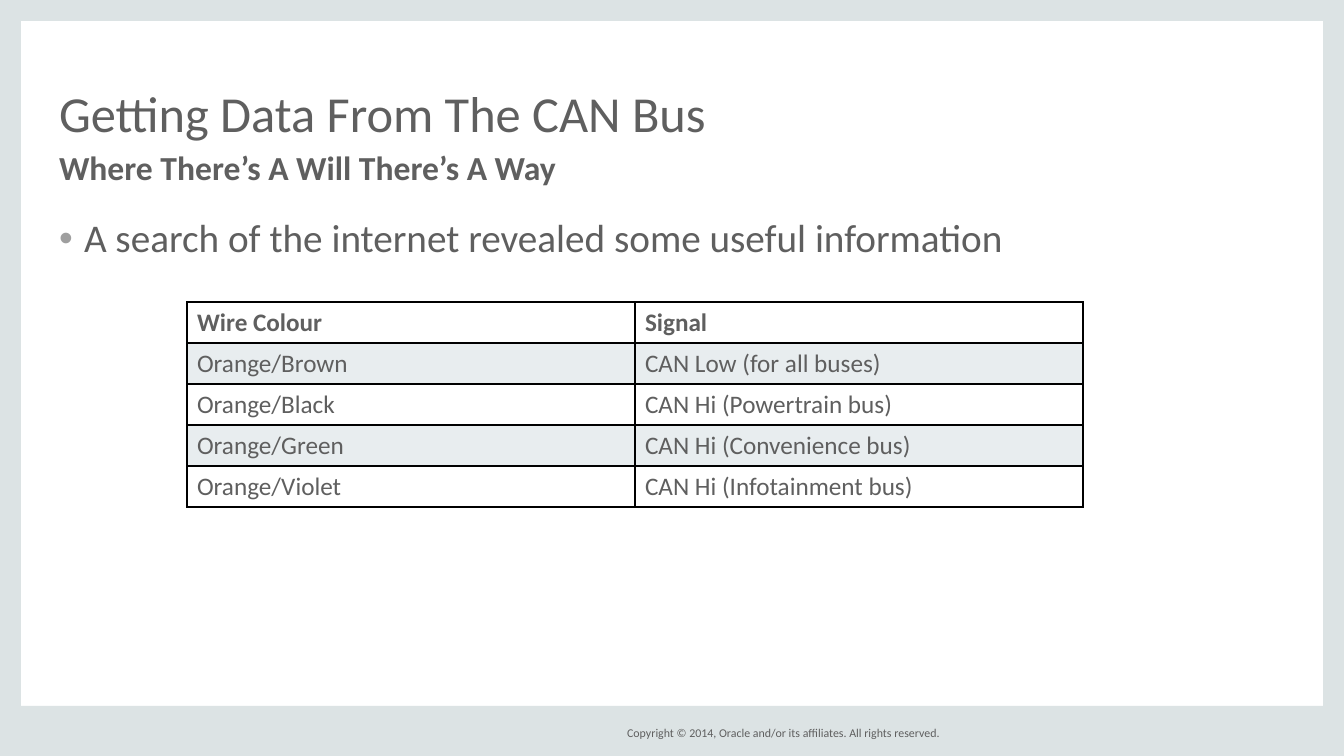
from lxml.etree import SubElement
from pptx import Presentation
from pptx.dml.color import RGBColor
from pptx.enum.shapes import MSO_SHAPE as Shape
from pptx.enum.text import MSO_ANCHOR as Anchor, PP_ALIGN as Align
from pptx.oxml.ns import qn
from pptx.util import Pt

TITLE = "Getting Data From The CAN Bus"
SUBTITLE = "Where There’s A Will There’s A Way"
BULLET = "A search of the internet revealed some useful information"
COPYRIGHT = "Copyright © 2014, Oracle and/or its affiliates. All rights reserved."
WIRES = [
    ("Wire Colour", "Signal"),
    ("Orange/Brown", "CAN Low (for all buses)"),
    ("Orange/Black", "CAN Hi (Powertrain bus)"),
    ("Orange/Green", "CAN Hi (Convenience bus)"),
    ("Orange/Violet", "CAN Hi (Infotainment bus)"),
]

FONT = "Calibri"
INK = RGBColor(0x5F, 0x5F, 0x5F)
FRAME = RGBColor(0xDC, 0xE3, 0xE4)
BAND = RGBColor(0xE8, 0xED, 0xEF)
BULLET_GREY = RGBColor(0x9F, 0x9F, 0x9F)
BORDER = RGBColor(0x00, 0x00, 0x00)

WIDTH, HEIGHT = 1344, 756
EDGE, FOOTER = 21, 50
LEFT, TEXT_WIDTH = 59, 1226
INDENT = 25
COLUMN, ROW = 448, 41


def px(length):
    return round(length * 914400 / 100.8)


def style(paragraph, size, bold=False):
    for run in paragraph.runs:
        run.font.name = FONT
        run.font.size = Pt(size)
        run.font.bold = bold
        run.font.color.rgb = INK


def add_text(slide, text, box, size, bold=False, spacing=1.0,
             anchor=Anchor.TOP, align=Align.LEFT, wrap=True):
    frame = slide.shapes.add_textbox(*map(px, box)).text_frame
    frame.margin_left = frame.margin_right = 0
    frame.margin_top = frame.margin_bottom = 0
    frame.word_wrap = wrap
    frame.vertical_anchor = anchor
    frame.text = text
    paragraph = frame.paragraphs[0]
    paragraph.alignment = align
    paragraph.line_spacing = spacing
    style(paragraph, size, bold)
    return paragraph


def add_bullet(paragraph):
    properties = paragraph._p.get_or_add_pPr()
    properties.set("marL", str(px(INDENT)))
    properties.set("indent", str(-px(INDENT)))
    colour = SubElement(properties, qn("a:buClr"))
    SubElement(colour, qn("a:srgbClr"), val=str(BULLET_GREY))
    SubElement(properties, qn("a:buFont"), typeface="Arial")
    SubElement(properties, qn("a:buChar"), char="•")


def add_borders(cell):
    properties = cell._tc.get_or_add_tcPr()
    for side in ("lnL", "lnR", "lnT", "lnB"):
        line = SubElement(properties, qn(f"a:{side}"), w=str(Pt(1)))
        fill = SubElement(line, qn("a:solidFill"))
        SubElement(fill, qn("a:srgbClr"), val=str(BORDER))


def add_frame(slide):
    for box in (
        (0, 0, EDGE, HEIGHT),
        (WIDTH - EDGE, 0, EDGE, HEIGHT),
        (0, HEIGHT - FOOTER, WIDTH, FOOTER),
        (0, 0, WIDTH, EDGE),
    ):
        bar = slide.shapes.add_shape(Shape.RECTANGLE, *map(px, box))
        bar.shadow.inherit = False
        bar.fill.solid()
        bar.fill.fore_color.rgb = FRAME
        bar.line.fill.background()


def add_wires(slide):
    box = (187, 302, COLUMN * len(WIRES[0]), ROW * len(WIRES))
    table = slide.shapes.add_table(len(WIRES), len(WIRES[0]), *map(px, box)).table
    table.first_row = True
    table.horz_banding = False
    for row, texts in enumerate(WIRES):
        for column, text in enumerate(texts):
            cell = table.cell(row, column)
            cell.text = text
            style(cell.text_frame.paragraphs[0], 18, bold=row == 0)
            add_borders(cell)
            if row % 2:
                cell.fill.solid()
                cell.fill.fore_color.rgb = BAND
            else:
                cell.fill.background()


def main():
    deck = Presentation()
    deck.slide_width, deck.slide_height = px(WIDTH), px(HEIGHT)
    slide = deck.slides.add_slide(deck.slide_layouts[6])
    add_frame(slide)
    add_text(slide, COPYRIGHT, (593, 723, 347, 20), 8.5,
             anchor=Anchor.MIDDLE, align=Align.RIGHT, wrap=False)
    add_text(slide, TITLE, (LEFT, 44, TEXT_WIDTH, 98), 36,
             spacing=0.8, anchor=Anchor.BOTTOM)
    add_text(slide, SUBTITLE, (LEFT, 151, TEXT_WIDTH, 38), 24, bold=True, spacing=0.9)
    add_bullet(add_text(slide, BULLET, (LEFT, 219, TEXT_WIDTH, 70), 28, spacing=0.9))
    add_wires(slide)
    deck.save("out.pptx")


if __name__ == "__main__":
    main()
